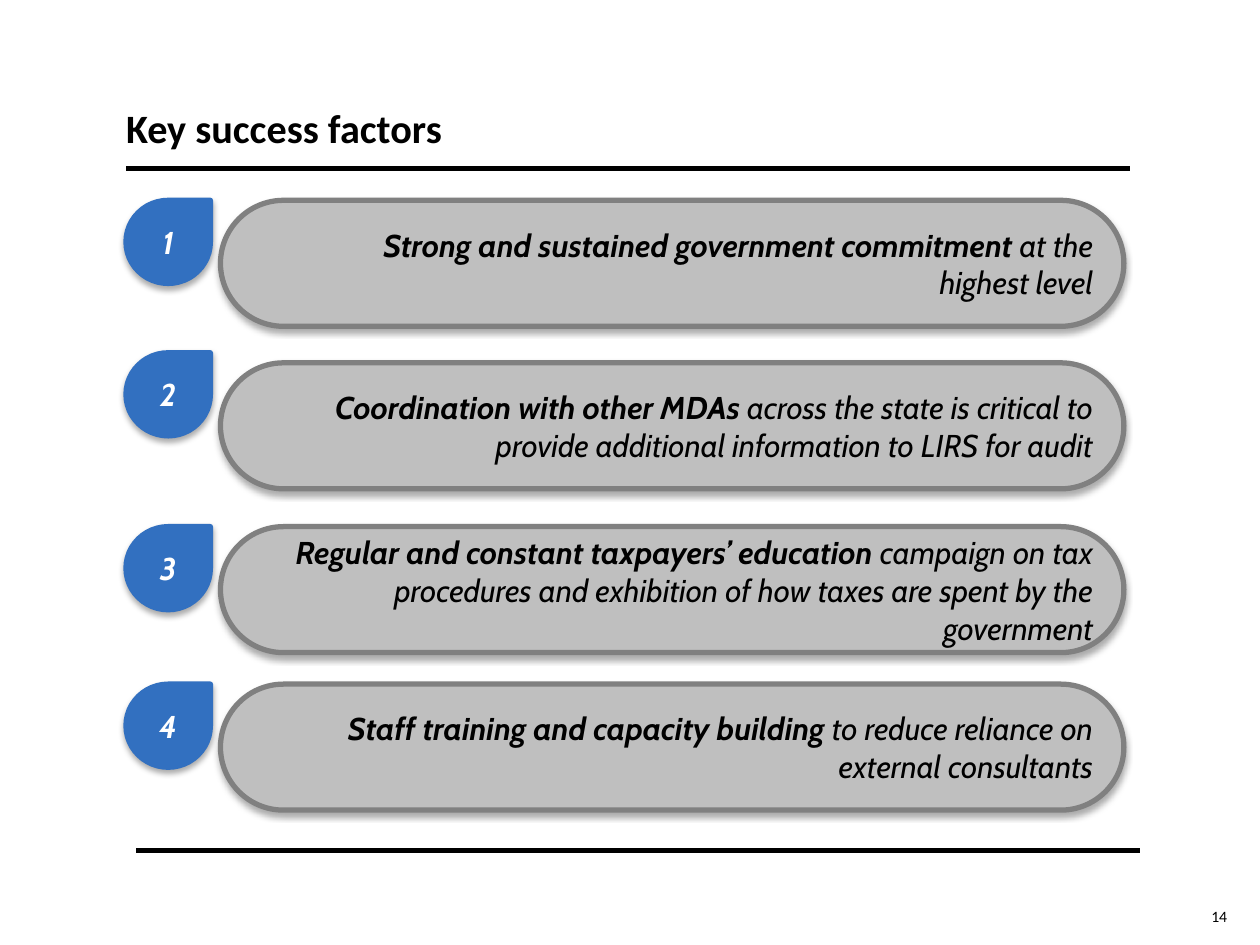
from lxml import etree
from pptx import Presentation
from pptx.dml.color import RGBColor
from pptx.enum.shapes import MSO_CONNECTOR, MSO_SHAPE
from pptx.enum.text import MSO_ANCHOR, MSO_AUTO_SIZE, PP_ALIGN
from pptx.oxml import parse_xml
from pptx.oxml.ns import nsdecls, qn
from pptx.util import Inches, Pt

SHADOW = f"""<a:effectLst {nsdecls("a")}>
  <a:outerShdw blurRad="{Pt(3.5)}" dist="{Pt(2.2)}" dir="5400000" rotWithShape="0">
    <a:srgbClr val="000000"><a:alpha val="32000"/></a:srgbClr>
  </a:outerShdw>
</a:effectLst>"""


def add_run(paragraph, text, size, font_name, color, bold=False, italic=False):
    run = paragraph.add_run()
    run.text = text
    run.font.size = Pt(size)
    run.font.name = font_name
    run.font.bold = bold
    run.font.italic = italic
    run.font.color.rgb = RGBColor.from_string(color)


def add_shadowed_shape(kind, left, top, width, height, fill, line):
    shape = slide.shapes.add_shape(
        kind, Inches(left), Inches(top), Inches(width), Inches(height))
    shape.fill.solid()
    shape.fill.fore_color.rgb = RGBColor.from_string(fill)
    shape.line.color.rgb = RGBColor.from_string(line)
    shape.line.width = Pt(3)
    shape._element.spPr.append(parse_xml(SHADOW))
    shape.text_frame.word_wrap = True
    shape.text_frame.vertical_anchor = MSO_ANCHOR.MIDDLE
    return shape


presentation = Presentation()
presentation.slide_width = Inches(10)
presentation.slide_height = Inches(7.5)
slide = presentation.slides.add_slide(presentation.slide_layouts[5])

# Title
title = slide.shapes.title
title.left, title.top = Inches(1), Inches(0.25)
title.width, title.height = Inches(7.97), Inches(0.95)

# Slide number
number_box = slide.shapes.add_textbox(
    Inches(9.59), Inches(7.2), Inches(0.15), Inches(0.15))

for box, text, size, bold, alignment in [
    (title, "Key success factors", 23, True, PP_ALIGN.LEFT),
    (number_box, "14", 9, False, PP_ALIGN.RIGHT),
]:
    frame = box.text_frame
    frame.margin_left = frame.margin_right = 0
    frame.margin_top = frame.margin_bottom = 0
    frame.vertical_anchor = MSO_ANCHOR.BOTTOM
    frame.auto_size = MSO_AUTO_SIZE.NONE
    frame.word_wrap = box is title
    paragraph = frame.paragraphs[0]
    paragraph.alignment = alignment
    add_run(paragraph, text, size, "Calibri", "000000", bold)

# Rules above and below the factors
for left, top in [(1, 1.34), (1.08, 6.75)]:
    rule = slide.shapes.add_connector(
        MSO_CONNECTOR.STRAIGHT,
        Inches(left), Inches(top), Inches(left + 7.97), Inches(top))
    rule.line.color.rgb = RGBColor.from_string("000000")
    rule.line.width = Pt(3)
    etree.SubElement(rule._element.spPr, qn("a:effectLst"))

# Numbered factors: badge top, bar top, hanging first line, bold part, rest
factors = [
    (1.59, 1.59, False, "Strong and sustained government commitment ",
     "at the highest level"),
    (2.8, 2.88, False, "Coordination with other MDAs ",
     "across the state is critical to provide additional information to LIRS for audit"),
    (4.18, 4.18, True, "Regular and constant taxpayers’ education ",
     "campaign on tax procedures and exhibition of how taxes are spent by the government"),
    (5.43, 5.43, True, "Staff training and capacity building",
     " to reduce reliance on external consultants"),
]
for number, (badge_top, bar_top, hanging, lead, detail) in enumerate(factors, start=1):
    badge = add_shadowed_shape(
        MSO_SHAPE.TEAR, 1, badge_top, 0.67, 0.66, "3270C0", "3270C0")
    paragraph = badge.text_frame.paragraphs[0]
    paragraph.alignment = PP_ALIGN.CENTER
    add_run(paragraph, str(number), 18, "Cabin", "FFFFFF", bold=True, italic=True)

    bar = add_shadowed_shape(
        MSO_SHAPE.ROUNDED_RECTANGLE, 1.75, bar_top, 7.17, 1, "BFBFBF", "808080")
    bar.adjustments[0] = 0.5
    paragraph = bar.text_frame.paragraphs[0]
    paragraph.alignment = PP_ALIGN.RIGHT
    paragraph.level = 1
    if hanging:
        properties = paragraph._p.get_or_add_pPr()
        properties.set("marL", "0")
        properties.set("indent", str(Inches(-0.25)))
    add_run(paragraph, lead, 18, "Cabin", "000000", bold=True, italic=True)
    add_run(paragraph, detail, 18, "Cabin", "000000", italic=True)

presentation.save("out.pptx")
